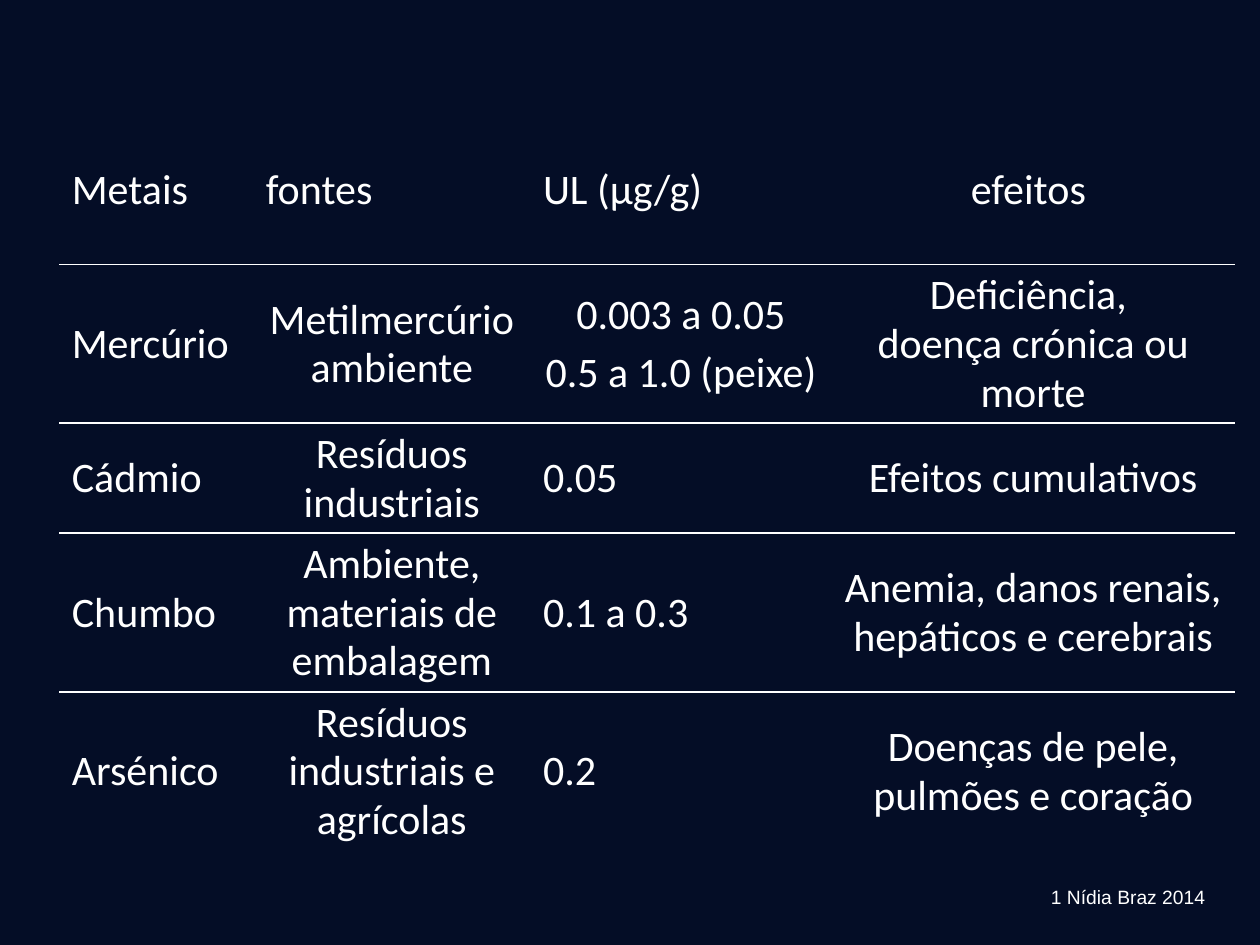
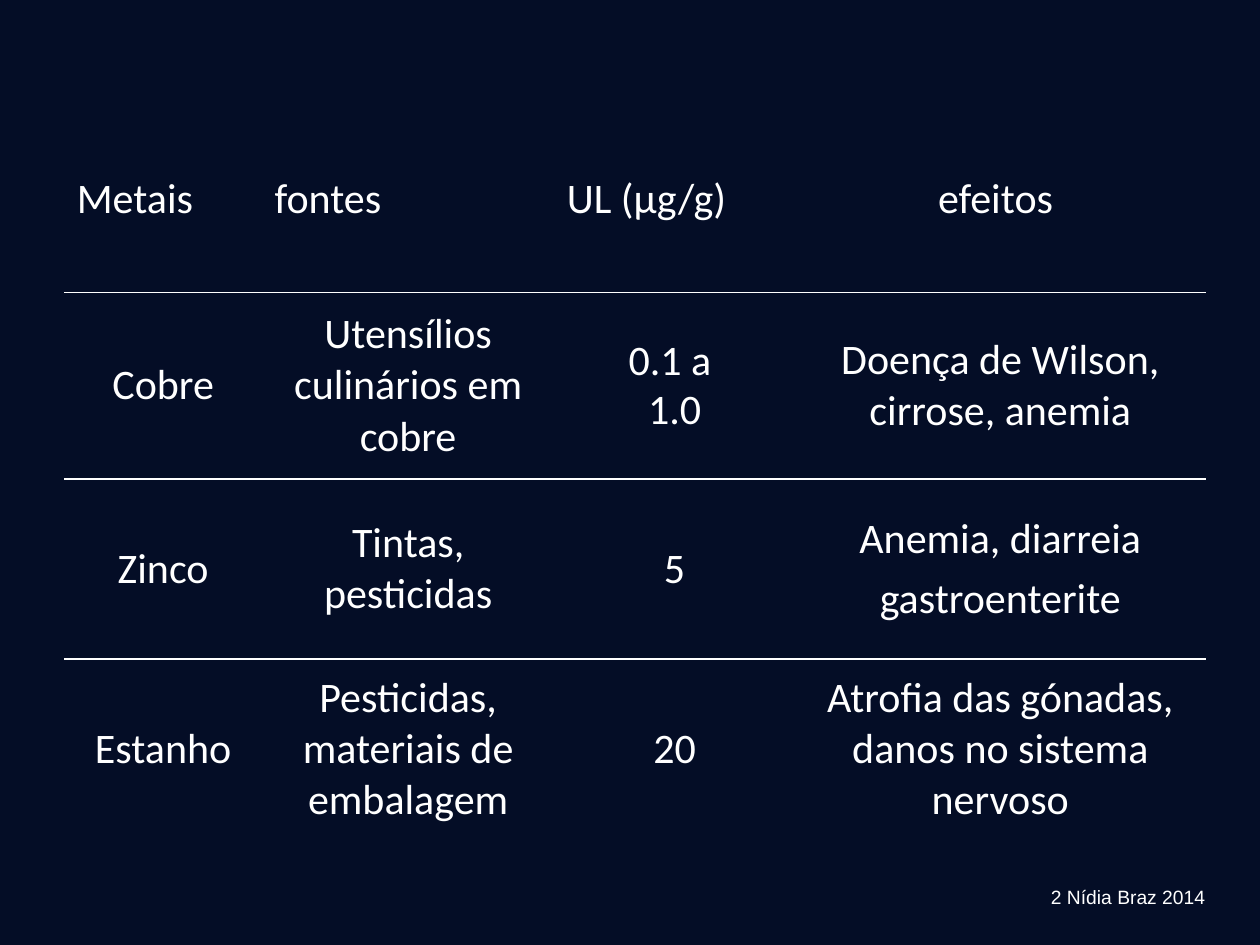
from lxml import etree
from pptx import Presentation
from pptx.dml.color import RGBColor
from pptx.enum.text import MSO_ANCHOR, MSO_AUTO_SIZE, PP_ALIGN
from pptx.oxml.ns import qn
from pptx.util import Inches, Pt

NAVY = RGBColor(0x04, 0x0D, 0x26)
WHITE = RGBColor(0xFF, 0xFF, 0xFF)
TABLE_FONT = "Calibri"
FOOTER_FONT = "Arial"
FOOTER_TEXT = "Nídia Braz 2014 "
TIGHT_SPACING = 0.95
PARAGRAPH_GAP = Pt(5)
HEADER = ["Metais", "fontes", "UL (µg/g)", "efeitos "]
LIMIT_COLUMN = 2

TOXIC_METALS = [
    ["Mercúrio", "Metilmercúrio ambiente", "0.003 a 0.05\n0.5 a 1.0 (peixe)",
     "Deficiência, \ndoença crónica ou morte"],
    ["Cádmio", "Resíduos industriais", "0.05", "Efeitos cumulativos"],
    ["Chumbo", "Ambiente, materiais de embalagem", "0.1 a 0.3",
     "Anemia, danos renais, hepáticos e cerebrais"],
    ["Arsénico", "Resíduos industriais e agrícolas", "0.2",
     "Doenças de pele, pulmões e coração"],
]
OTHER_METALS = [
    ["Cobre", "Utensílios culinários em cobre", "0.1 a \n1.0",
     "Doença de Wilson, cirrose, anemia"],
    ["Zinco", "Tintas, pesticidas", "5", "Anemia, diarreia\ngastroenterite"],
    ["Estanho", "Pesticidas, materiais de embalagem", "20",
     "Atrofia das gónadas, danos no sistema nervoso"],
]


def style_runs(paragraph, font_name, size):
    """Apply the white text style to every run of a paragraph."""
    for run in paragraph.runs:
        run.font.name = font_name
        run.font.size = Pt(size)
        run.font.color.rgb = WHITE


def set_borders(cell, ruled_sides):
    """Draw a white 1 pt rule on the named sides (T, B) and clear the others."""
    properties = cell._tc.get_or_add_tcPr()
    for index, side in enumerate("LRTB"):
        line = etree.Element(qn(f"a:ln{side}"), w=str(Pt(1)))
        if side in ruled_sides:
            fill = etree.SubElement(line, qn("a:solidFill"))
            etree.SubElement(fill, qn("a:srgbClr"), val=str(WHITE))
        else:
            etree.SubElement(line, qn("a:noFill"))
        properties.insert(index, line)


def fill_cell(cell, text, alignment, tight):
    """Write a table cell, one paragraph for each line of text."""
    cell.fill.background()
    cell.vertical_anchor = MSO_ANCHOR.MIDDLE
    cell.text_frame.text = text
    continues = False
    for paragraph in cell.text_frame.paragraphs:
        paragraph.alignment = alignment
        paragraph.line_spacing = TIGHT_SPACING if tight else 1.0
        paragraph.space_before = Pt(0) if continues else PARAGRAPH_GAP
        style_runs(paragraph, TABLE_FONT, 24)
        continues = paragraph.text.endswith(" ")


def add_metals_table(slide, left, top, widths, heights, metals, left_columns, all_tight):
    """Add a table of metals with rules between its rows."""
    rows = [HEADER] + metals
    frame = slide.shapes.add_table(len(rows), len(HEADER), Inches(left), Inches(top),
                                   Inches(sum(widths)), Inches(sum(heights)))
    table = frame.table
    table.first_row = False
    table.horz_banding = False
    for column, width in zip(table.columns, widths):
        column.width = Inches(width)
    for row, height in zip(table.rows, heights):
        row.height = Inches(height)
    for row_index, row in enumerate(rows):
        is_header = row_index == 0
        ruled_sides = ("" if is_header else "T") + ("B" if row_index < len(rows) - 1 else "")
        for column_index, text in enumerate(row):
            if is_header:
                is_left = column_index < len(HEADER) - 1
            else:
                is_left = column_index in left_columns and "\n" not in text
            cell = table.cell(row_index, column_index)
            fill_cell(cell, text, PP_ALIGN.LEFT if is_left else PP_ALIGN.CENTER,
                      all_tight or is_header or column_index == LIMIT_COLUMN)
            set_borders(cell, ruled_sides)


def add_footer(slide, number):
    """Add the slide number and author line at the bottom right."""
    box = slide.shapes.add_textbox(Inches(8.15), Inches(6.98), Inches(1.65), Inches(0.29))
    text_frame = box.text_frame
    text_frame.word_wrap = True
    text_frame.auto_size = MSO_AUTO_SIZE.SHAPE_TO_FIT_TEXT
    text_frame.text = f"{number} {FOOTER_TEXT}"
    paragraph = text_frame.paragraphs[0]
    paragraph.alignment = PP_ALIGN.CENTER
    style_runs(paragraph, FOOTER_FONT, 11)


def main():
    """Build the two slides on metals and save them."""
    presentation = Presentation()
    presentation.slide_width = Inches(10)
    presentation.slide_height = Inches(7.5)
    background = presentation.slide_master.background.fill
    background.solid()
    background.fore_color.rgb = NAVY
    blank_layout = presentation.slide_layouts[6]

    toxic_slide = presentation.slides.add_slide(blank_layout)
    add_metals_table(toxic_slide, 0.47, 0.92, [1.54, 2.2, 2.39, 3.2],
                     [1.18, 1.18, 0.82, 1.18, 1.18], TOXIC_METALS,
                     left_columns=(0, LIMIT_COLUMN), all_tight=True)

    other_slide = presentation.slides.add_slide(blank_layout)
    add_metals_table(other_slide, 0.51, 0.84, [1.57, 2.32, 1.91, 3.26],
                     [1.48, 1.48, 1.43, 1.43], OTHER_METALS,
                     left_columns=(), all_tight=False)

    for number, slide in enumerate(presentation.slides, start=1):
        add_footer(slide, number)
    presentation.save("out.pptx")


if __name__ == "__main__":
    main()
